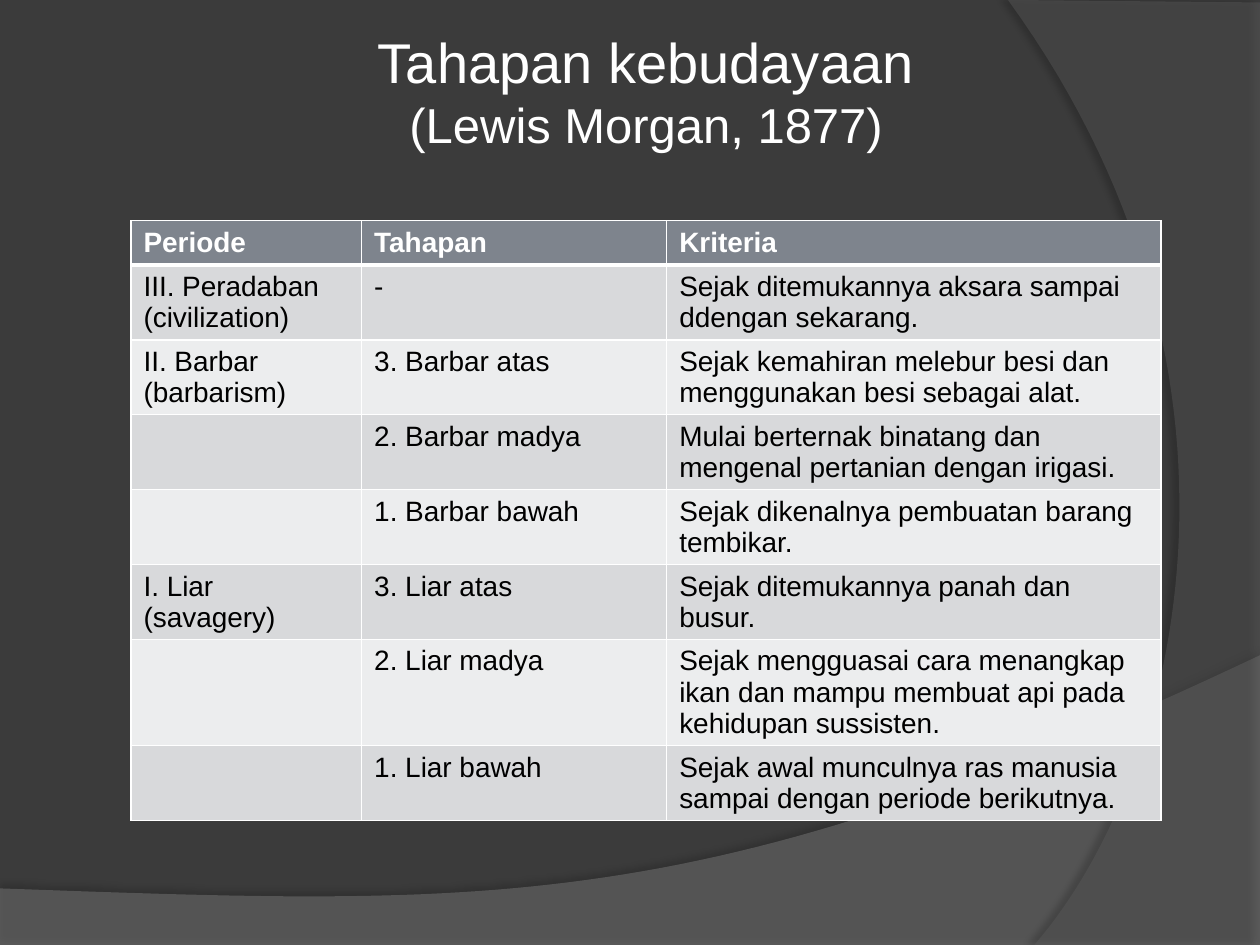
import pptx
import pptx.util
import pptx.dml.color
import pptx.enum.text
import pptx.oxml
import pptx.oxml.ns
from pptx.util import Cm, Pt

FONT = "Arial"
WHITE, BLACK = "FFFFFF", "000000"
HEADER_FILL, BANDS = "7E848D", ("D8D9DB", "ECEDEE")
TITLE = [("Tahapan kebudayaan", 32), ("(Lewis Morgan, 1877)", 28)]
COLUMNS = [("Periode", 4.65), ("Tahapan", 6.15), ("Kriteria", 9.96)]
HEADER_HEIGHT = 0.89
ROWS = [
    (1.51, "III. Peradaban (civilization)", "-", "Sejak ditemukannya aksara sampai ddengan sekarang."),
    (1.51, "II. Barbar (barbarism)", "3. Barbar atas", "Sejak kemahiran melebur besi dan menggunakan besi sebagai alat."),
    (1.51, "", "2. Barbar madya", "Mulai berternak binatang dan mengenal pertanian dengan irigasi."),
    (1.51, "", "1. Barbar bawah", "Sejak dikenalnya pembuatan barang tembikar."),
    (1.51, "I. Liar (savagery)", "3. Liar atas", "Sejak ditemukannya panah dan busur."),
    (2.14, "", "2. Liar madya", "Sejak mengguasai cara menangkap ikan dan mampu membuat api pada kehidupan sussisten."),
    (1.51, "", "1. Liar bawah", "Sejak awal munculnya ras manusia sampai dengan periode berikutnya."),
]
SWOOSHES = [
    dict(corners=[(0, 17.91), (0, 19.08), (25.4, 19.08), (25.4, 13.21)],
         curve=[(14.2, 18.52), (9.93, 18.26), (0, 17.91)],
         fill="7F7F7F", alpha=45, shadow=(35, 4, 3.5, 270)),
    dict(corners=[(25.4, 0.05), (25.4, 19.05), (20.85, 19.05)],
         curve=[(23.75, 15.72), (25.86, 7.62), (20.32, 0)],
         fill="5E5E5E", alpha=40, shadow=(45, 4, 4, 180)),
]


def rgb(color):
    return pptx.dml.color.RGBColor.from_string(color)


def xml(text):
    return pptx.oxml.parse_xml(text.replace(" ", f" {pptx.oxml.ns.nsdecls('a')} ", 1))


def set_font(p, size, color, bold=False):
    p.font.name, p.font.size, p.font.bold = FONT, Pt(size), bold
    p.font.color.rgb = rgb(color)


def bezier(points, steps=60):
    for i in range(1, steps + 1):
        t = i / steps
        weights = ((1 - t) ** 3, 3 * t * (1 - t) ** 2, 3 * t * t * (1 - t), t ** 3)
        yield tuple(sum(w * pt[axis] for w, pt in zip(weights, points)) for axis in (0, 1))


def add_swoosh(s, corners, curve, fill, alpha, shadow):
    outline = corners + list(bezier([corners[-1]] + curve))
    points = [(Cm(x), Cm(y)) for x, y in outline]
    fb = s.shapes.build_freeform(*points[0])
    fb.add_line_segments(points[1:], close=True)
    sp = fb.convert_to_shape()
    sp.fill.solid()
    sp.fill.fore_color.rgb = rgb(fill)
    sp.line.fill.background()
    color = sp._element.spPr.find(".//" + pptx.oxml.ns.qn("a:srgbClr"))
    color.append(xml(f'<a:alpha val="{alpha * 1000}"/>'))
    opacity, blur, dist, angle = shadow
    sp._element.spPr.append(xml(
        f'<a:effectLst ><a:outerShdw blurRad="{Pt(blur)}" dist="{Pt(dist)}" dir="{angle * 60000}" '
        f'rotWithShape="0"><a:srgbClr val="{BLACK}"><a:alpha val="{opacity * 1000}"/>'
        f'</a:srgbClr></a:outerShdw></a:effectLst>'))


def set_borders(cell, header, below_header):
    tcPr = cell._tc.get_or_add_tcPr()
    thick = {"B": header, "T": below_header}
    for i, side in enumerate("LRTB"):
        width = 3 if thick.get(side) else 1
        tcPr.insert(i, xml(f'<a:ln{side} w="{Pt(width)}"><a:solidFill><a:srgbClr val="{WHITE}"/>'
                           f'</a:solidFill></a:ln{side}>'))


def add_stages(s):
    names, widths = zip(*COLUMNS)
    rows = [(HEADER_HEIGHT, *names)] + ROWS
    heights = [row[0] for row in rows]
    table = s.shapes.add_table(len(rows), len(widths), Cm(2.64), Cm(4.45),
                               Cm(sum(widths)), Cm(sum(heights))).table
    for column, width in zip(table.columns, widths):
        column.width = Cm(width)
    for r, (height, *texts) in enumerate(rows):
        table.rows[r].height = Cm(height)
        header = r == 0
        for c, text in enumerate(texts):
            cell = table.cell(r, c)
            cell.text = text
            set_font(cell.text_frame.paragraphs[0], 16, WHITE if header else BLACK, header)
            cell.fill.solid()
            cell.fill.fore_color.rgb = rgb(HEADER_FILL if header else BANDS[(r - 1) % 2])
            set_borders(cell, header, r == 1)


def add_title(s):
    tf = s.shapes.add_textbox(Cm(3.18), Cm(0.43), Cm(19.69), Cm(2.82)).text_frame
    tf.word_wrap = True
    for i, (text, size) in enumerate(TITLE):
        p = tf.add_paragraph() if i else tf.paragraphs[0]
        p.text = text
        p.alignment = pptx.enum.text.PP_ALIGN.CENTER
        set_font(p, size, WHITE)


prs = pptx.Presentation()
prs.slide_width, prs.slide_height = Cm(25.4), Cm(19.05)
s = prs.slides.add_slide(prs.slide_layouts[6])
s.background.fill.solid()
s.background.fill.fore_color.rgb = rgb("3B3B3B")
for swoosh in SWOOSHES:
    add_swoosh(s, **swoosh)
add_stages(s)
add_title(s)
prs.save("out.pptx")
